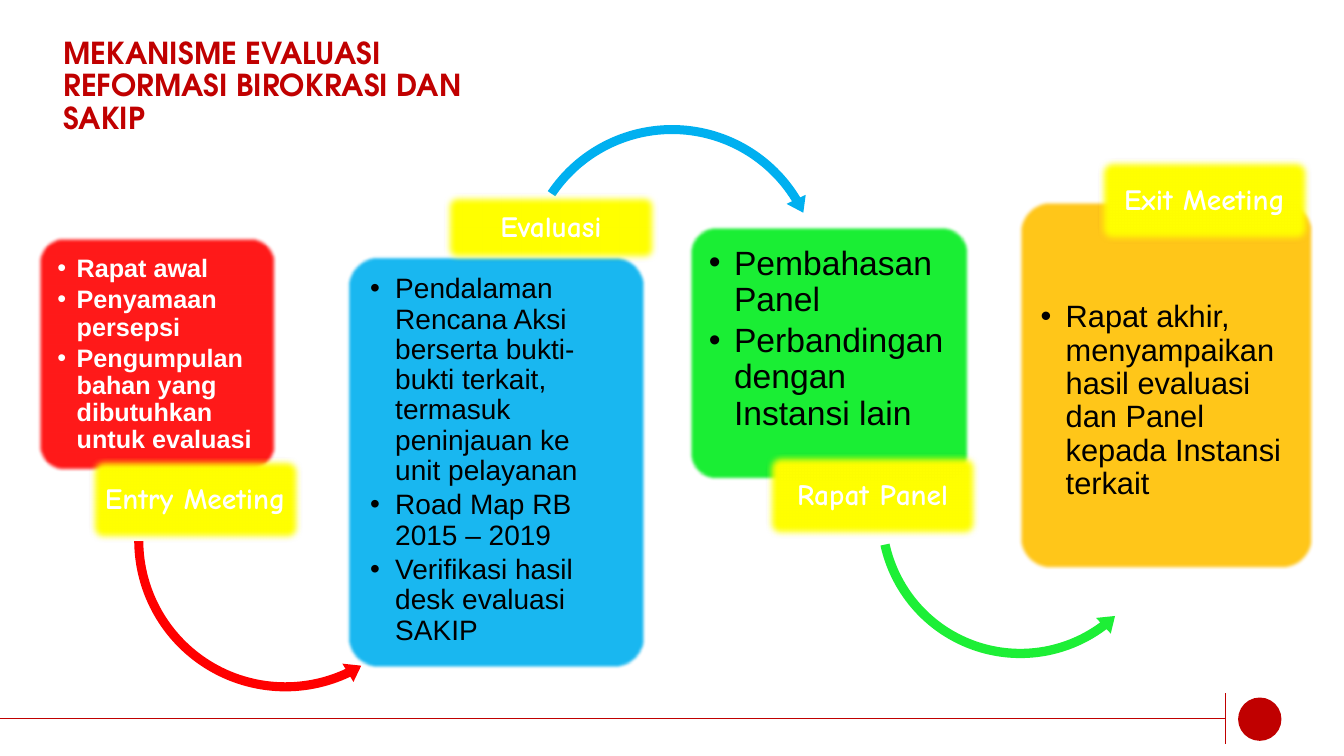
from lxml.etree import SubElement
from pptx import Presentation
from pptx.dml.color import RGBColor
from pptx.enum.shapes import MSO_CONNECTOR, MSO_SHAPE
from pptx.enum.text import MSO_ANCHOR, MSO_AUTO_SIZE, PP_ALIGN
from pptx.oxml.ns import qn
from pptx.util import Inches, Pt

COLORS = {
    "brand": "C00000", "red": "FF0000", "blue": "00B0F0", "green": "03ED1F",
    "light green": "1DEF36", "gold": "FFC000", "label": "FFFF00",
    "label edge": "7D0000", "white": "FFFFFF", "black": "000000",
}
RGB = {name: RGBColor.from_string(value) for name, value in COLORS.items()}

prs = Presentation()
prs.slide_width, prs.slide_height = Inches(13.33), Inches(7.5)
COL, ROW = prs.slide_width / 1333, prs.slide_height / 750
LABEL_WIDTH = 211

# Boxes are left, top, width, height in columns and rows of the grid
STEPS = [
    dict(color="red", card=(37, 235, 237, 233), text=(43, 240, 226, 172),
         size=18, indent=0.19, ink="white", bold=True, anchor=MSO_ANCHOR.TOP,
         points=["Rapat awal", "Penyamaan persepsi",
                 "Pengumpulan bahan yang dibutuhkan untuk evaluasi"],
         label="Entry Meeting", label_at=(88, 454), label_height=84,
         arrow=dict(kind=MSO_SHAPE.LEFT_CIRCULAR_ARROW, box=(127, 380, 312, 312),
                    turn=15.1, color="red",
                    bends=(0.029, 3.544, 29.778, 98.724, 0.034))),
    dict(color="blue", card=(344, 254, 296, 409), text=(353, 351, 278, 304),
         size=20, indent=0.25, ink="black", bold=False, anchor=MSO_ANCHOR.BOTTOM,
         points=["Pendalaman Rencana Aksi berserta bukti-bukti terkait, "
                 "termasuk peninjauan ke unit pelayanan",
                 "Road Map RB 2015 – 2019",
                 "Verifikasi hasil desk evaluasi SAKIP"],
         label="Evaluasi", label_at=(441, 192), label_height=68,
         arrow=dict(kind=MSO_SHAPE.CIRCULAR_ARROW, box=(512, 118, 309, 309),
                    turn=0, color="blue",
                    bends=(0.029, 3.592, 197.245, 128.347, 0.034))),
    dict(color="green", card=(683, 224, 279, 253), text=(689, 230, 267, 187),
         size=24, indent=0.25, ink="black", bold=False, anchor=MSO_ANCHOR.TOP,
         points=["Pembahasan Panel", "Perbandingan dengan Instansi lain"],
         label="Rapat Panel", label_at=(760, 450), label_height=84,
         arrow=dict(kind=MSO_SHAPE.LEFT_CIRCULAR_ARROW, box=(864, 363, 296, 296),
                    turn=19.9, color="light green",
                    bends=(0.031, 3.761, 19.93, 88.659, 0.036))),
    dict(color="gold", card=(1010, 199, 293, 366), text=(1018, 285, 276, 271),
         size=22, indent=0.25, ink="black", bold=False, anchor=MSO_ANCHOR.TOP,
         points=["Rapat akhir, menyampaikan hasil evaluasi dan Panel "
                 "kepada Instansi terkait"],
         label="Exit Meeting", label_at=(1089, 157), label_height=84,
         arrow=None),
]


def on_grid(left, top, width, height):
    """Turn a box in grid cells into slide lengths."""
    return round(left * COL), round(top * ROW), round(width * COL), round(height * ROW)


def add_filled(kind, box, color, soft_edge=None):
    """Add a shape with a plain fill, no outline and, if given, a soft edge."""
    shape = slide.shapes.add_shape(kind, *on_grid(*box))
    shape.fill.solid()
    shape.fill.fore_color.rgb = RGB[color]
    shape.line.fill.background()
    shape.shadow.inherit = False
    if soft_edge:
        effects = shape._element.spPr.find(qn("a:effectLst"))
        SubElement(effects, qn("a:softEdge"), rad=str(Pt(soft_edge)))
    return shape


slide = prs.slides.add_slide(prs.slide_layouts.get_by_name("Comparison"))
title, *lists = slide.placeholders

title.left, title.top, title.width, title.height = on_grid(53, 86, 484, 54)
title.text_frame.text = "MEKANISME EVALUASI REFORMASI BIROKRASI DAN SAKIP"
title.text_frame.auto_size = MSO_AUTO_SIZE.NONE
title.text_frame.vertical_anchor = MSO_ANCHOR.BOTTOM
heading = title.text_frame.paragraphs[0]
heading.alignment = PP_ALIGN.LEFT
heading.line_spacing = 0.9
heading.font.name, heading.font.size = "TeX Gyre Adventor", Pt(21.6)
heading.font.bold, heading.font.color.rgb = True, RGB["brand"]

# Footer rule with its dot
add_filled(MSO_SHAPE.OVAL, (1228, 692, 43, 43), "brand")
for left, top, right, bottom in [(1215, 688, 1215, 738), (0, 713, 1215, 713)]:
    rule = slide.shapes.add_connector(
        MSO_CONNECTOR.STRAIGHT, *on_grid(left, top, right, bottom))
    rule.line.color.rgb, rule.line.width = RGB["brand"], Pt(0.5)
    SubElement(rule._element.spPr, qn("a:effectLst"))

for step, points in zip(STEPS, lists):
    card = add_filled(MSO_SHAPE.ROUNDED_RECTANGLE, step["card"], step["color"], 2.5)
    card.adjustments[0] = 0.1
    SubElement(card._element.spPr.find(".//" + qn("a:srgbClr")), qn("a:alpha"), val="90000")

    slide.shapes._spTree.append(points._element)  # bring the list above its card
    points.left, points.top, points.width, points.height = on_grid(*step["text"])
    frame = points.text_frame
    frame.text = "\n".join(step["points"])
    frame.auto_size = MSO_AUTO_SIZE.NONE
    frame.vertical_anchor = step["anchor"]
    frame.margin_left = frame.margin_right = Inches(0.14)
    frame.margin_top = frame.margin_bottom = Inches(0.14)
    for point in frame.paragraphs:
        point.alignment = PP_ALIGN.LEFT
        point.line_spacing, point.space_before = 0.9, Pt(0)
        point.space_after = Pt(0.15 * step["size"])
        point.font.name, point.font.size = "Arial", Pt(step["size"])
        point.font.bold, point.font.color.rgb = step["bold"], RGB[step["ink"]]
        layout = point._p.get_or_add_pPr()
        layout.set("marL", str(Inches(step["indent"])))
        layout.set("indent", str(-Inches(step["indent"])))
        bullet_font = SubElement(layout, qn("a:buFont"), typeface="Arial")
        bullet_font.addnext(SubElement(layout, qn("a:buChar"), char="•"))
        layout.append(layout.find(qn("a:defRPr")))

    if step["arrow"]:
        arrow = add_filled(step["arrow"]["kind"], step["arrow"]["box"], step["arrow"]["color"])
        arrow.rotation = step["arrow"]["turn"]
        for i, bend in enumerate(step["arrow"]["bends"]):
            arrow.adjustments[i] = bend

    left, top = step["label_at"]
    height = step["label_height"]
    label = add_filled(MSO_SHAPE.ROUNDED_RECTANGLE, (left, top, LABEL_WIDTH, height), "label", 5)
    label.adjustments[0] = 0.1
    label.line.color.rgb, label.line.width = RGB["label edge"], Pt(1)

    caption = slide.shapes.add_textbox(
        *on_grid(left + 2.5, top + 2.5, LABEL_WIDTH - 5, height - 5)).text_frame
    caption.text = step["label"]
    caption.word_wrap = True
    caption.vertical_anchor = MSO_ANCHOR.MIDDLE
    caption.margin_left = caption.margin_right = Inches(0.04)
    caption.margin_top = caption.margin_bottom = Inches(0.03)
    name = caption.paragraphs[0]
    name.alignment, name.line_spacing = PP_ALIGN.CENTER, 0.9
    name.font.name, name.font.size = "Comic Neue", Pt(21)
    name.font.bold, name.font.color.rgb = True, RGB["white"]

prs.save("out.pptx")
